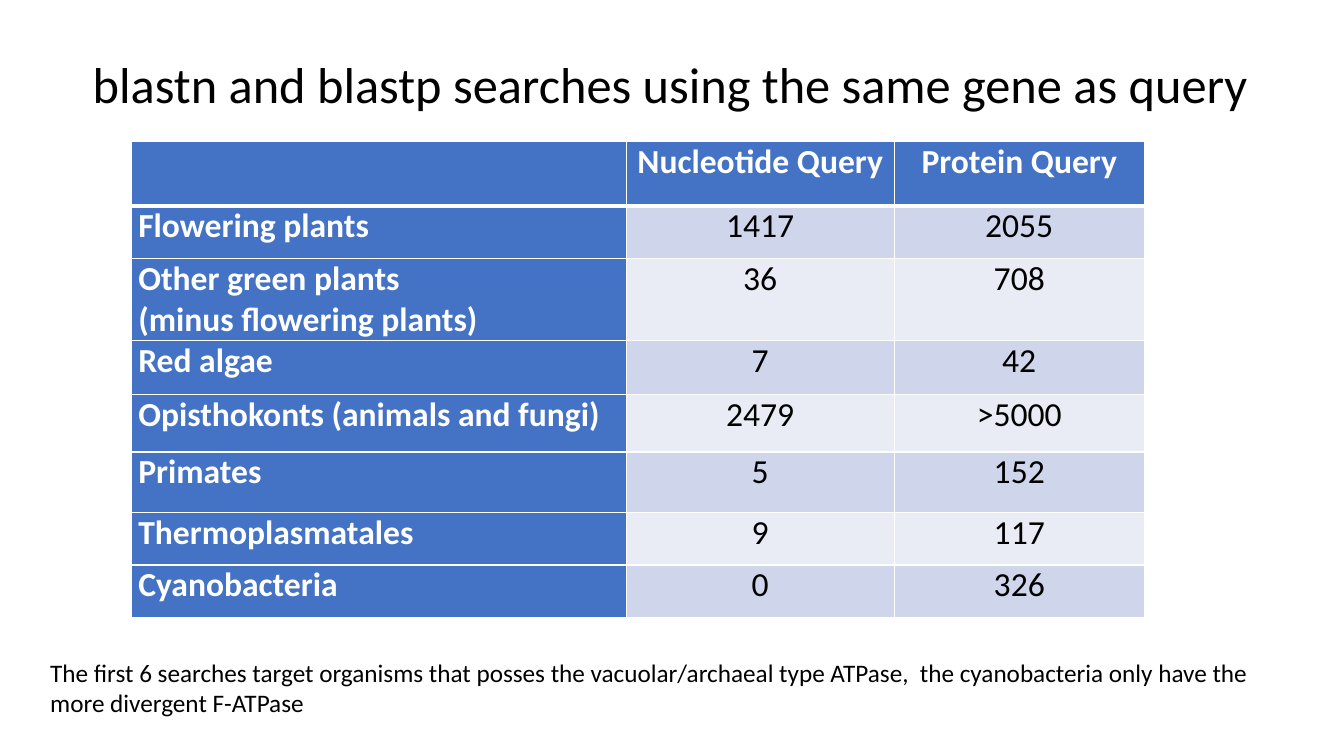
from dataclasses import dataclass

from lxml import etree
from pptx import Presentation
from pptx.dml.color import RGBColor
from pptx.enum.text import MSO_ANCHOR, MSO_AUTO_SIZE, PP_ALIGN
from pptx.oxml.ns import qn
from pptx.util import Pt

LEFT, CENTER = PP_ALIGN.LEFT, PP_ALIGN.CENTER
MIDDLE = MSO_ANCHOR.MIDDLE
GROW = MSO_AUTO_SIZE.SHAPE_TO_FIT_TEXT
TITLE_ONLY = 5


@dataclass(frozen=True)
class Theme:
    font: str = "Calibri"
    ink: str = "000000"
    white: str = "FFFFFF"
    heading: str = "4472C4"
    bands: tuple = ("CFD5EA", "E9EBF5")
    title_size: int = 36
    table_size: int = 24
    note_size: int = 18
    rule: int = 1
    header_rule: int = 3


THEME = Theme()

HEADINGS = ("", "Nucleotide Query", "Protein Query")
# Searched group, nucleotide hits, protein hits
SEARCHES = (
    ("Flowering plants", "1417", "2055"),
    ("Other green plants\n(minus flowering plants)", "36", "708"),
    ("Red algae", "7", "42"),
    ("Opisthokonts (animals and fungi)", "2479", ">5000"),
    ("Primates", "5", "152"),
    ("Thermoplasmatales", "9", "117"),
    ("Cyanobacteria", "0", "326"),
)
COLUMN_WIDTHS = (353.5, 191.5, 178.6)
ROW_HEIGHTS = (46, 37.4, 37.4, 39, 41, 43.2, 37.4, 37.4)


def write(paragraph, text, size, color, bold=False, align=LEFT):
    paragraph.alignment = align
    for index, line in enumerate(text.split("\n")):
        if index:
            paragraph.add_line_break()
        run = paragraph.add_run()
        run.text = line
        run.font.name = THEME.font
        run.font.size = Pt(size)
        run.font.bold = bold
        run.font.color.rgb = RGBColor.from_string(color)


def border_cell(cell, top, bottom):
    properties = cell._tc.get_or_add_tcPr()
    widths = {"a:lnL": THEME.rule, "a:lnR": THEME.rule, "a:lnT": top, "a:lnB": bottom}
    for position, (side, width) in enumerate(widths.items()):
        line = etree.Element(qn(side), w=str(Pt(width)))
        fill = etree.SubElement(line, qn("a:solidFill"))
        etree.SubElement(fill, qn("a:srgbClr"), val=THEME.white)
        properties.insert(position, line)


def add_title(slide, text, left, top, width, height):
    title = slide.shapes.title
    title.left, title.top, title.width, title.height = map(Pt, (left, top, width, height))
    frame = title.text_frame
    frame.word_wrap = True
    frame.vertical_anchor = MIDDLE
    frame.paragraphs[0].line_spacing = 0.9
    write(frame.paragraphs[0], text, THEME.title_size, THEME.ink)


def add_search_table(slide, left, top, width, height):
    rows = (HEADINGS, *SEARCHES)
    holder = slide.shapes.add_table(
        len(rows), len(HEADINGS), Pt(left), Pt(top), Pt(width), Pt(height))
    table = holder.table
    table.first_col = True
    for column, column_width in zip(table.columns, COLUMN_WIDTHS):
        column.width = Pt(column_width)

    for r, (values, row_height) in enumerate(zip(rows, ROW_HEIGHTS)):
        table.rows[r].height = Pt(row_height)
        for c, value in enumerate(values):
            cell = table.cell(r, c)
            is_heading = r == 0 or c == 0
            fill = THEME.heading if is_heading else THEME.bands[(r - 1) % 2]
            cell.fill.solid()
            cell.fill.fore_color.rgb = RGBColor.from_string(fill)
            cell.margin_left = cell.margin_right = Pt(5)
            cell.margin_top = cell.margin_bottom = 0
            border_cell(cell,
                        top=THEME.header_rule if r == 1 else THEME.rule,
                        bottom=THEME.header_rule if r == 0 else THEME.rule)
            if value:
                write(cell.text_frame.paragraphs[0], value, THEME.table_size,
                      THEME.white if is_heading else THEME.ink,
                      bold=is_heading, align=CENTER if c else LEFT)


def add_note(slide, text, left, top, width, height):
    note = slide.shapes.add_textbox(Pt(left), Pt(top), Pt(width), Pt(height))
    frame = note.text_frame
    frame.word_wrap = True
    frame.auto_size = GROW
    write(frame.paragraphs[0], text, THEME.note_size, THEME.ink)


def main():
    deck = Presentation()
    deck.slide_width, deck.slide_height = Pt(960), Pt(540)
    slide = deck.slides.add_slide(deck.slide_layouts[TITLE_ONLY])

    # Title
    add_title(slide, "blastn and blastp searches using the same gene as query",
              59, 10, 864, 104.4)
    # Hits per group and query type
    add_search_table(slide, 93.8, 101, 723.6, 337.7)
    # Note on the ATPase types
    add_note(slide,
             "The first 6 searches target organisms that posses the "
             "vacuolar/archaeal type ATPase,  the cyanobacteria only have "
             "the more divergent F-ATPase",
             28.8, 465.8, 902.9, 51)

    deck.save("out.pptx")


if __name__ == "__main__":
    main()
